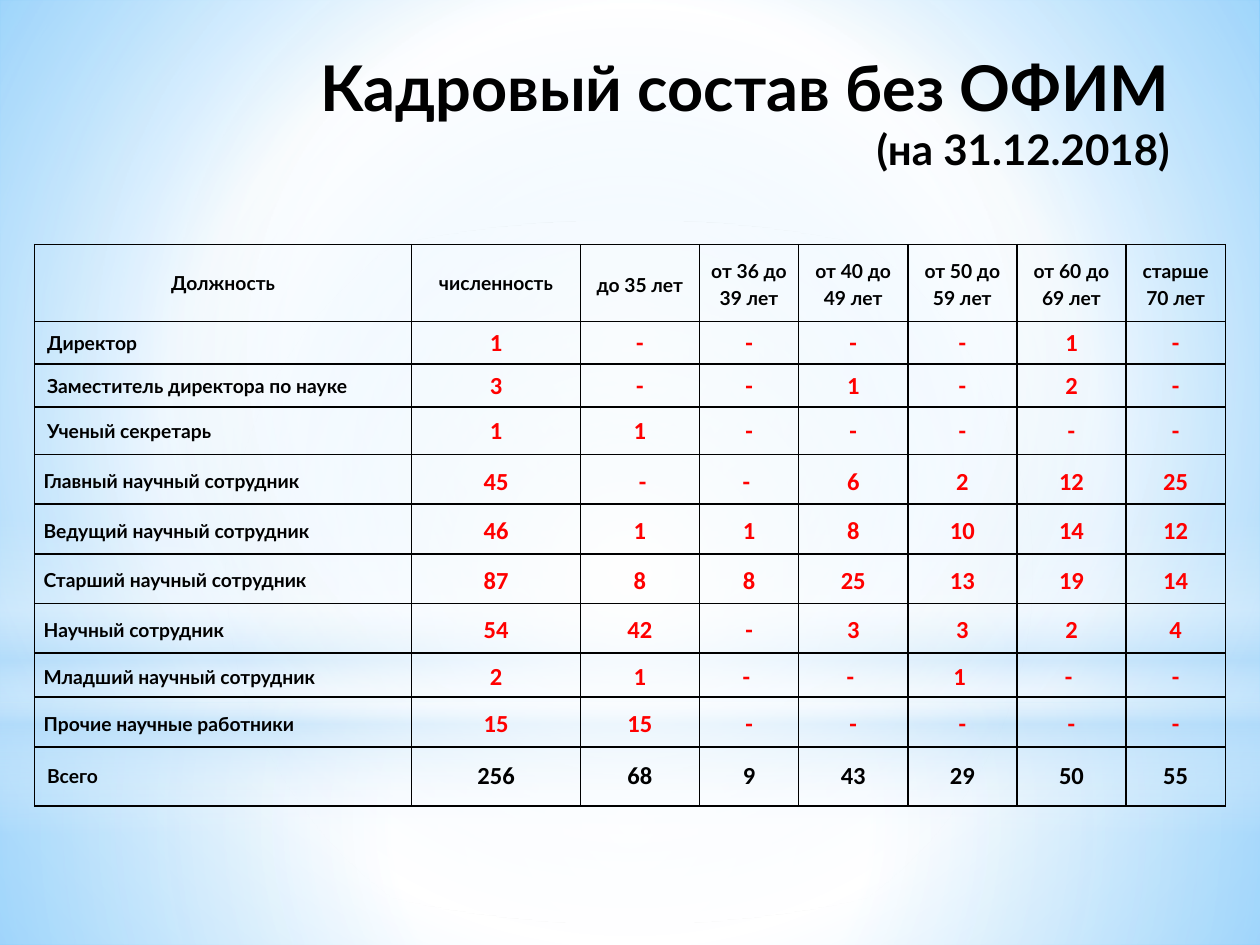
from dataclasses import dataclass

from lxml import etree
from pptx import Presentation
from pptx.dml.color import RGBColor
from pptx.enum import shapes, text
from pptx.oxml import parse_xml
from pptx.oxml.ns import nsdecls, qn
from pptx.util import Cm, Pt


@dataclass(frozen=True)
class Theme:
    head_font: str = "Lato"
    number_font: str = "Calibri"
    ink: str = "000000"
    accent: str = "FF0000"
    white: str = "FFFFFF"
    haze: str = "B4DCFA"
    sky: str = "99D4FE"
    deep_sky: str = "54BDFF"
    title_size: int = 36
    date_size: int = 24
    label_size: int = 11
    number_size: int = 14
    border: int = 1


T = Theme()
ROOMY = dict(margin_left=Cm(0.25), margin_right=Cm(0.25),
             margin_top=Cm(0.13), margin_bottom=Cm(0.13))
TIGHT = dict(margin_left=Cm(0.18), margin_right=Cm(0.18),
             margin_top=0, margin_bottom=0)

BACKDROP = [(0, T.sky, 100), (60, T.white, 100), (100, T.deep_sky, 100)]
GLOWS = [
    ("RECTANGLE", (0, 14.17, 25.4, 4.88), None,
     [(0, T.white, 90), (37, T.white, 75), (100, T.haze, 78)]),
    ("RECTANGLE", (0, 0, 25.4, 14.17), None,
     [(0, T.white, 88), (48, T.white, 61), (100, T.haze, 78)]),
    ("RECTANGLE", (0, 10.46, 25.4, 6.35), 90,
     [(0, T.white, 0), (29, T.white, 29), (45, T.haze, 40),
      (55, T.white, 25), (65, T.haze, 60), (100, T.white, 0)]),
    ("OVAL", (0, 4.45, 25.4, 14.17), None,
     [(0, T.white, 100), (56, T.white, 0), (100, T.white, 0)]),
]

COLUMNS = [7.6, 3.4, 2.4, 2, 2.2, 2.2, 2.2, 2]
HEIGHTS = [1.55, 0.85, 0.8, 0.96, 1, 1, 1, 1, 0.89, 1, 1.19]
STAFF = [
    ("Должность", "численность", "до 35 лет", "от 36 до 39 лет",
     "от 40 до 49 лет", "от 50 до 59 лет", "от 60 до 69 лет", "старше 70 лет"),
    ("Директор", "1", "-", "-", "-", "-", "1", "-"),
    ("Заместитель директора по науке", "3", "-", "-", "1", "-", "2", "-"),
    ("Ученый секретарь", "1", "1", "-", "-", "-", "-", "-"),
    ("Главный научный сотрудник", "45", " -", "- ", "6", "2", "12", "25"),
    ("Ведущий научный сотрудник", "46", "1", "1", "8", "10", "14", "12"),
    ("Старший научный сотрудник", "87", "8", "8", "25", "13", "19", "14"),
    ("Научный сотрудник", "54", "42", "-", "3", "3", "2", "4"),
    ("Младший научный сотрудник", "2", "1", "- ", "- ", "1 ", "- ", "-"),
    ("Прочие научные работники", "15", "15", "-", "-", "-", "-", "-"),
    ("Всего", "256", "68", "9", "43", "29", "50", "55"),
]


def apply(obj, fmt):
    for name, value in fmt.items():
        setattr(obj, name, value)


def add_run(p, words, size, font=T.head_font, color=T.ink):
    r = p.add_run()
    r.text = words
    apply(r.font, dict(name=font, size=Pt(size), bold=True))
    r.font.color.rgb = RGBColor.from_string(color)


def set_gradient(fill, element, stops, angle=None):
    fill.gradient()
    marks = "".join(
        f'<a:gs pos="{pos * 1000}"><a:srgbClr val="{color}">'
        f'<a:alpha val="{alpha * 1000}"/></a:srgbClr></a:gs>'
        for pos, color, alpha in stops)
    if angle is None:
        course = ('<a:path path="circle"><a:fillToRect l="50000" t="50000" '
                  'r="50000" b="50000"/></a:path>')
    else:
        course = f'<a:lin ang="{angle * 60000}" scaled="0"/>'
    old = element.find(".//" + qn("a:gradFill"))
    old.getparent().replace(old, parse_xml(
        f'<a:gradFill {nsdecls("a")} rotWithShape="1">'
        f'<a:gsLst>{marks}</a:gsLst>{course}</a:gradFill>'))


def add_glow(slide, kind, box, angle, stops):
    sp = slide.shapes.add_shape(getattr(shapes.MSO_SHAPE, kind), *map(Cm, box))
    sp.shadow.inherit = False
    sp.line.fill.background()
    set_gradient(sp.fill, sp.element, stops, angle)


def add_title(slide):
    sp = slide.shapes.title
    apply(sp, dict(left=Cm(4.83), top=Cm(0.84), width=Cm(19), height=Cm(3.38)))
    tf = sp.text_frame
    apply(tf, dict(ROOMY, word_wrap=True, auto_size=text.MSO_AUTO_SIZE.NONE,
                   vertical_anchor=text.MSO_ANCHOR.TOP))
    p = tf.paragraphs[0]
    p.alignment = text.PP_ALIGN.RIGHT
    add_run(p, "Кадровый состав без ОФИМ ", T.title_size)
    add_run(p, "(на 31.12.2018)", T.date_size)
    sp.element.getparent().append(sp.element)


def set_borders(cell):
    tcPr = cell._tc.get_or_add_tcPr()
    for i, side in enumerate(("lnL", "lnR", "lnT", "lnB")):
        ln = etree.Element(qn("a:" + side), w=str(Pt(T.border)))
        fill = etree.SubElement(ln, qn("a:solidFill"))
        etree.SubElement(fill, qn("a:srgbClr"), val=T.ink)
        tcPr.insert(i, ln)


def fill_cell(cell, words, row, col):
    header, total = row == 0, row == len(STAFF) - 1
    tight = 4 <= row < len(STAFF) - 1 or (header and col >= 2)
    cell.fill.background()
    set_borders(cell)
    apply(cell, dict(TIGHT if tight else ROOMY,
                     vertical_anchor=text.MSO_ANCHOR.MIDDLE))
    p = cell.text_frame.paragraphs[0]
    if header or col:
        p.alignment = text.PP_ALIGN.CENTER
    if tight:
        p.line_spacing = 1.15
    if header or col == 0:
        add_run(p, words, T.label_size)
    else:
        add_run(p, words, T.number_size, T.number_font,
                T.ink if total else T.accent)


def add_staff_table(slide):
    table = slide.shapes.add_table(
        len(STAFF), len(COLUMNS), Cm(0.7), Cm(4.93),
        Cm(sum(COLUMNS)), Cm(sum(HEIGHTS))).table
    apply(table, dict(first_row=False, horz_banding=False))
    for column, width in zip(table.columns, COLUMNS):
        column.width = Cm(width)
    for row, height in zip(table.rows, HEIGHTS):
        row.height = Cm(height)
    for i, entries in enumerate(STAFF):
        for j, words in enumerate(entries):
            fill_cell(table.cell(i, j), words, i, j)


def main():
    prs = Presentation()
    apply(prs, dict(slide_width=Cm(25.4), slide_height=Cm(19.05)))
    slide = prs.slides.add_slide(prs.slide_layouts[5])
    set_gradient(slide.background.fill, slide.element, BACKDROP)
    for glow in GLOWS:
        add_glow(slide, *glow)
    add_title(slide)
    add_staff_table(slide)
    prs.save("out.pptx")


if __name__ == "__main__":
    main()
